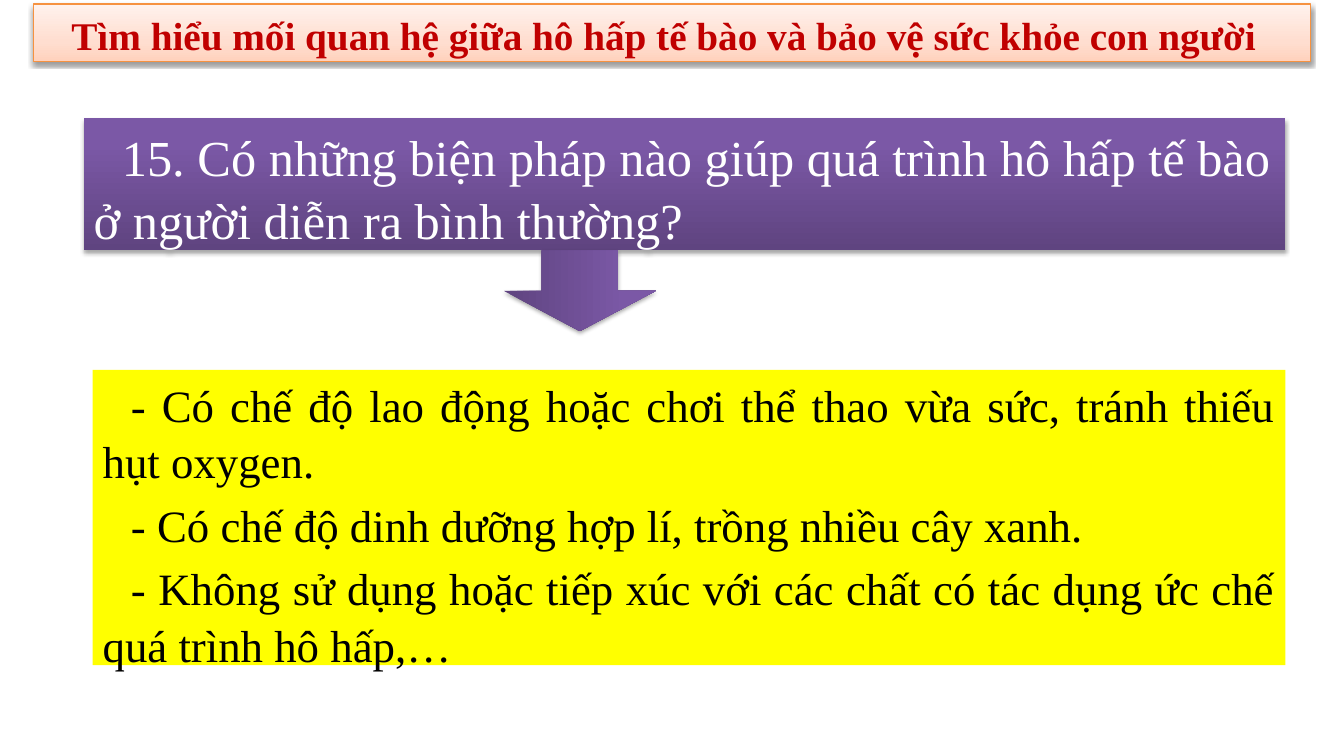
from lxml import etree
from pptx import Presentation
from pptx.dml.color import RGBColor
from pptx.enum.shapes import MSO_SHAPE as Preset
from pptx.enum.text import MSO_ANCHOR as Anchor, MSO_AUTO_SIZE as AutoSize, PP_ALIGN as Align
from pptx.oxml.ns import qn
from pptx.util import Emu, Pt

PX = 9144
FONT = "Times New Roman"
WHITE = RGBColor(0xFF, 0xFF, 0xFF)
BLACK = RGBColor(0x00, 0x00, 0x00)
YELLOW = RGBColor(0xFF, 0xFF, 0x00)
RED = RGBColor(0xC0, 0x00, 0x00)
ORANGE = RGBColor(0xF6, 0x92, 0x40)
PURPLES = (
    (0, RGBColor(0x5F, 0x44, 0x80)),
    (80, RGBColor(0x7B, 0x58, 0xA6)),
    (100, RGBColor(0x7C, 0x57, 0xA8)),
)
PEACHES = (
    (0, RGBColor(0xFF, 0xD2, 0xBD)),
    (35, RGBColor(0xFF, 0xDE, 0xD0)),
    (100, RGBColor(0xFF, 0xF2, 0xED)),
)

TITLE = "Tìm hiểu mối quan hệ giữa hô hấp tế bào và bảo vệ sức khỏe con người"
QUESTION = "15. Có những biện pháp nào giúp quá trình hô hấp tế bào ở người diễn ra bình thường?"
ANSWERS = (
    "- Có chế độ lao động hoặc chơi thể thao vừa sức, tránh thiếu hụt oxygen.",
    "- Có chế độ dinh dưỡng hợp lí, trồng nhiều cây xanh.",
    "- Không sử dụng hoặc tiếp xúc với các chất có tác dụng ức chế quá trình hô hấp,…",
)


def add_block(slide, box, preset=Preset.RECTANGLE):
    """Add a plain shape with neither line nor shadow in the box."""
    shape = slide.shapes.add_shape(preset, *(Emu(length * PX) for length in box))
    shape.line.fill.background()
    shape.shadow.inherit = False
    return shape


def add_color(parent, color):
    """Append an RGB colour element and return it."""
    return etree.SubElement(parent, qn("a:srgbClr"), val=str(color))


def set_gradient(shape, stops):
    """Fill the shape with colour stops running from bottom to top."""
    shape.fill.gradient()
    shape.fill.gradient_angle = 90
    stop_list = shape.element.spPr.find(".//" + qn("a:gsLst"))
    for stop in list(stop_list):
        stop_list.remove(stop)
    for percent, color in stops:
        add_color(etree.SubElement(stop_list, qn("a:gs"), pos=str(percent * 1000)), color)


def set_shadow(shape, opacity, distance):
    """Cast a soft black shadow downwards, with the distance in points."""
    effects = shape.element.spPr.find(qn("a:effectLst"))
    shadow = etree.SubElement(
        effects, qn("a:outerShdw"), blurRad=str(Pt(3.1)), dist=str(Pt(distance)),
        dir="5400000", rotWithShape="0",
    )
    etree.SubElement(add_color(shadow, BLACK), qn("a:alpha"), val=str(opacity * 1000))


def write_text(shape, *texts, size, color, bold=False, align=Align.JUSTIFY):
    """Write one paragraph per text with an indented first line."""
    frame = shape.text_frame
    frame.word_wrap = True
    frame.auto_size = AutoSize.SHAPE_TO_FIT_TEXT
    frame.vertical_anchor = Anchor.TOP
    for index, text in enumerate(texts):
        paragraph = frame.add_paragraph() if index else frame.paragraphs[0]
        paragraph.alignment = align
        paragraph.line_spacing = 1.05
        paragraph.space_after = Pt(5)
        paragraph._p.get_or_add_pPr().set("indent", str(28 * PX))
        run = paragraph.add_run()
        run.text = text
        run.font.name = FONT
        run.font.size = Pt(size)
        run.font.bold = bold
        run.font.color.rgb = color


def add_question(slide, box):
    """Place the purple question panel."""
    panel = add_block(slide, box)
    set_gradient(panel, PURPLES)
    set_shadow(panel, 35, 1.8)
    write_text(panel, QUESTION, size=36, color=WHITE, align=Align.LEFT)


def add_answers(slide, box):
    """Place the yellow answer panel."""
    panel = add_block(slide, box)
    panel.fill.solid()
    panel.fill.fore_color.rgb = YELLOW
    write_text(panel, *ANSWERS, size=32, color=BLACK)


def add_down_arrow(slide, box):
    """Place a right arrow turned to point down so that it fills the box."""
    left, top, width, height = box
    inset = (width - height) // 2
    arrow = add_block(slide, (left + inset, top - inset, height, width), Preset.RIGHT_ARROW)
    arrow.rotation = 90
    set_gradient(arrow, PURPLES)
    set_shadow(arrow, 35, 1.8)


def add_title(slide, box):
    """Place the peach title bar."""
    bar = add_block(slide, box)
    set_gradient(bar, PEACHES)
    bar.line.color.rgb = ORANGE
    bar.line.width = Pt(0.75)
    set_shadow(bar, 38, 1.6)
    write_text(bar, TITLE, size=28, color=RED, bold=True)


def main():
    """Build the slide and save it."""
    presentation = Presentation()
    presentation.slide_width = Emu(1333 * PX)
    presentation.slide_height = Emu(750 * PX)
    slide = presentation.slides.add_slide(presentation.slide_layouts[6])
    add_question(slide, (83, 117, 1192, 131))
    add_answers(slide, (92, 367, 1183, 293))
    add_down_arrow(slide, (500, 248, 151, 80))
    add_title(slide, (33, 4, 1267, 57))
    presentation.save("out.pptx")


if __name__ == "__main__":
    main()
